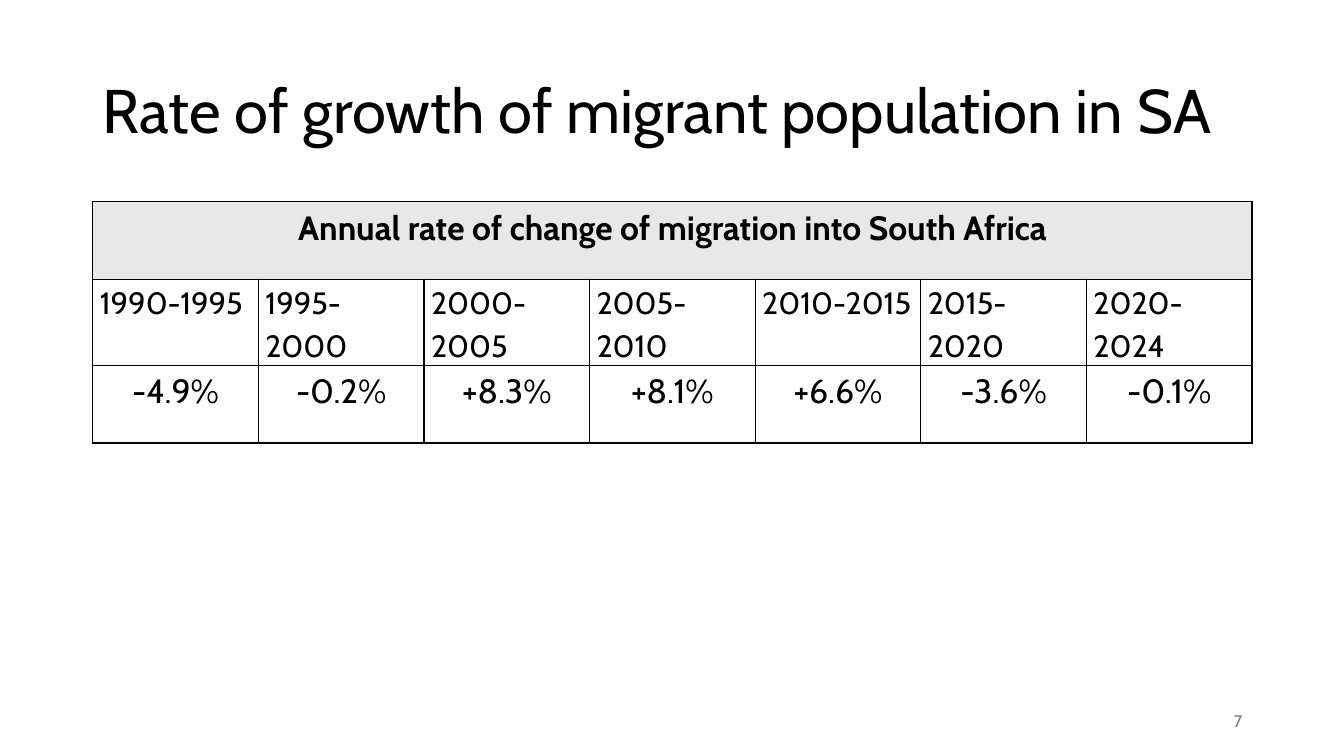
from dataclasses import dataclass

import lxml.etree
import pptx
import pptx.dml.color
import pptx.enum.text
import pptx.oxml.ns
import pptx.util

ALIGN = pptx.enum.text.PP_ALIGN
ANCHOR = pptx.enum.text.MSO_ANCHOR
FONT_NAME = "Cabin"
BLACK = "000000"
HEADER_GREY = "E8E8E8"
NUMBER_GREY = "797979"

# Slide frame, in inches
SLIDE_WIDTH, SLIDE_HEIGHT = 13.33, 7.5
MARGIN = 0.92
CONTENT_WIDTH = 11.5
ROW_HEIGHT = 0.77


@dataclass
class Period:
    years: str
    rate: str


@dataclass
class TextStyle:
    size: float
    align: ALIGN = ALIGN.LEFT
    color: str = BLACK
    bold: bool = False
    line_spacing: float = 1.0
    space_after: float = 0


PERIODS = [
    Period("1990-1995", "-4.9%"),
    Period("1995-2000", "-0.2%"),
    Period("2000-2005", "+8.3%"),
    Period("2005-2010", "+8.1%"),
    Period("2010-2015", "+6.6%"),
    Period("2015-2020", "-3.6%"),
    Period("2020-2024", "-0.1%"),
]
TITLE_STYLE = TextStyle(44, line_spacing=0.9)
HEADER_STYLE = TextStyle(24, ALIGN.CENTER, bold=True, line_spacing=1.15, space_after=8)
YEARS_STYLE = TextStyle(22, line_spacing=1.15, space_after=8)
RATE_STYLE = TextStyle(24, ALIGN.CENTER, line_spacing=1.15, space_after=8)
NUMBER_STYLE = TextStyle(12, ALIGN.RIGHT, NUMBER_GREY)


def rgb(color: str) -> pptx.dml.color.RGBColor:
    return pptx.dml.color.RGBColor.from_string(color)


def write_text(text_frame, text: str, style: TextStyle) -> None:
    text_frame.text = text
    paragraph = text_frame.paragraphs[0]
    paragraph.alignment = style.align
    paragraph.line_spacing = style.line_spacing
    paragraph.space_before = pptx.util.Pt(0)
    paragraph.space_after = pptx.util.Pt(style.space_after)
    paragraph.font.name = FONT_NAME
    paragraph.font.size = pptx.util.Pt(style.size)
    paragraph.font.bold = style.bold
    paragraph.font.color.rgb = rgb(style.color)


def add_borders(cell, color: str, width: float) -> None:
    properties = cell._tc.get_or_add_tcPr()
    qualified = pptx.oxml.ns.qn
    for side in ("lnL", "lnR", "lnT", "lnB"):
        line = lxml.etree.SubElement(
            properties, qualified(f"a:{side}"), w=str(pptx.util.Pt(width))
        )
        fill = lxml.etree.SubElement(line, qualified("a:solidFill"))
        lxml.etree.SubElement(fill, qualified("a:srgbClr"), val=color)


def format_cell(cell) -> None:
    cell.margin_left = cell.margin_right = pptx.util.Inches(0.07)
    cell.margin_top = cell.margin_bottom = 0
    cell.vertical_anchor = ANCHOR.TOP
    add_borders(cell, BLACK, 1)
    cell.fill.background()


def add_title(slide, text: str) -> None:
    title = slide.shapes.title
    title.left, title.top = pptx.util.Inches(MARGIN), pptx.util.Inches(0.4)
    title.width, title.height = pptx.util.Inches(CONTENT_WIDTH), pptx.util.Inches(1.45)
    write_text(title.text_frame, text, TITLE_STYLE)
    title.text_frame.auto_size = pptx.enum.text.MSO_AUTO_SIZE.NONE
    title.text_frame.vertical_anchor = ANCHOR.MIDDLE


def add_rate_table(slide, heading: str, periods: list[Period]) -> None:
    row_count = 3
    table = slide.shapes.add_table(
        row_count,
        len(periods),
        pptx.util.Inches(MARGIN),
        pptx.util.Inches(2),
        pptx.util.Inches(CONTENT_WIDTH),
        pptx.util.Inches(row_count * ROW_HEIGHT),
    ).table
    table.first_row = table.horz_banding = False
    for cell in table.iter_cells():
        format_cell(cell)

    # Heading across all columns
    header = table.cell(0, 0)
    header.merge(table.cell(0, len(periods) - 1))
    header.fill.solid()
    header.fill.fore_color.rgb = rgb(HEADER_GREY)
    write_text(header.text_frame, heading, HEADER_STYLE)

    # One column per period
    for column, period in enumerate(periods):
        write_text(table.cell(1, column).text_frame, period.years, YEARS_STYLE)
        write_text(table.cell(2, column).text_frame, period.rate, RATE_STYLE)


def add_slide_number(slide, number: str) -> None:
    width = 3
    box = slide.shapes.add_textbox(
        pptx.util.Inches(MARGIN + CONTENT_WIDTH - width),
        pptx.util.Inches(6.95),
        pptx.util.Inches(width),
        pptx.util.Inches(0.4),
    )
    box.text_frame.word_wrap = True
    box.text_frame.vertical_anchor = ANCHOR.MIDDLE
    write_text(box.text_frame, number, NUMBER_STYLE)


def main() -> None:
    presentation = pptx.Presentation()
    presentation.slide_width = pptx.util.Inches(SLIDE_WIDTH)
    presentation.slide_height = pptx.util.Inches(SLIDE_HEIGHT)
    title_only = presentation.slide_layouts[5]
    slide = presentation.slides.add_slide(title_only)

    add_title(slide, "Rate of growth of migrant population in SA")
    add_rate_table(slide, "Annual rate of change of migration into South Africa", PERIODS)
    add_slide_number(slide, "7")
    presentation.save("out.pptx")


if __name__ == "__main__":
    main()
